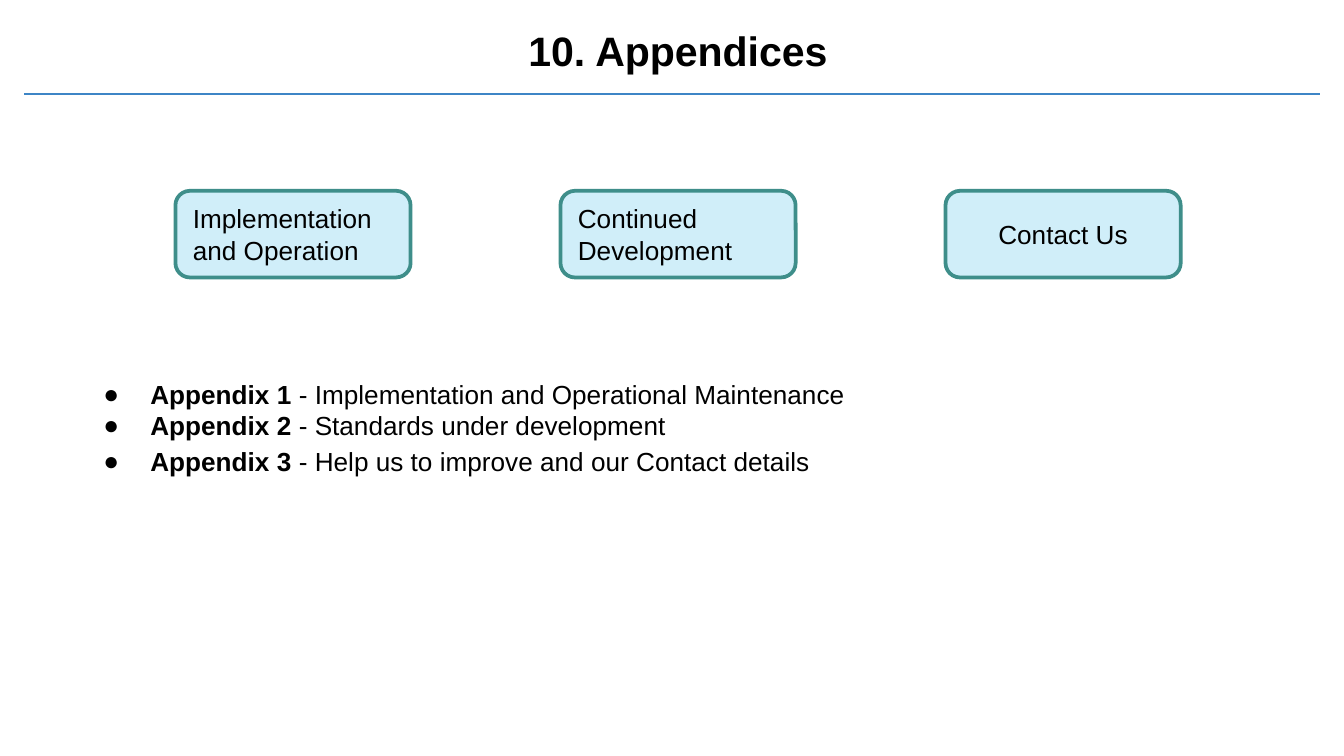
import pptx
import pptx.dml.color
import pptx.enum.shapes
import pptx.enum.text
import pptx.oxml
import pptx.oxml.ns
import pptx.util

PX = 4572  # EMU per px, 200 px to the inch
FONT = "Arial"
COLORS = {"text": "000000", "rule": "3D85C6", "fill": "D0EEF9", "border": "3E8E8A"}
ALIGN = pptx.enum.text.PP_ALIGN
ANCHOR = pptx.enum.text.MSO_ANCHOR


def px(n):
    return pptx.util.Emu(n * PX)


def rgb(name):
    return pptx.dml.color.RGBColor.from_string(COLORS[name])


def add_xml(parent, tag, **attrs):
    element = parent.makeelement(pptx.oxml.ns.qn(tag), attrs)
    parent.append(element)
    return element


def add_text(p, text, size=14, bold=False, color="text"):
    r = p.add_run()
    r.text = text
    r.font.name = FONT
    r.font.size = pptx.util.Pt(size)
    r.font.bold = bold
    r.font.color.rgb = rgb(color)


def set_frame(tf, inset_y=20, anchor=ANCHOR.TOP):
    tf.word_wrap = True
    tf.auto_size = pptx.enum.text.MSO_AUTO_SIZE.NONE
    tf.vertical_anchor = anchor
    tf.margin_left = tf.margin_right = px(20)
    tf.margin_top = tf.margin_bottom = px(inset_y)


def set_title(s, text):
    sp = s.shapes.title
    sp.left, sp.top, sp.width, sp.height = px(77), px(18), px(1864), px(126)
    set_frame(sp.text_frame)
    p = sp.text_frame.paragraphs[0]
    p.alignment = ALIGN.CENTER
    add_text(p, text, size=22, bold=True)


def add_rule(s, x1, x2, y):
    line = s.shapes.add_connector(
        pptx.enum.shapes.MSO_CONNECTOR.STRAIGHT, px(x1), px(y), px(x2), px(y))
    line.line.color.rgb = rgb("rule")
    line.line.width = pptx.util.Pt(1.5)
    add_xml(line._element.spPr, "a:effectLst")


def add_button(s, x, y, text, align):
    sp = s.shapes.add_shape(
        pptx.enum.shapes.MSO_SHAPE.ROUNDED_RECTANGLE, px(x), px(y), px(350), px(129))
    sp.shadow.inherit = False
    sp.fill.solid()
    sp.fill.fore_color.rgb = rgb("fill")
    sp.line.color.rgb = rgb("border")
    sp.line.width = pptx.util.Pt(2)
    set_frame(sp.text_frame, inset_y=10, anchor=ANCHOR.MIDDLE)
    p = sp.text_frame.paragraphs[0]
    p.alignment = align
    add_text(p, text)


def set_bullet(p):
    pPr = p._p.get_or_add_pPr()
    pPr.set("marL", str(px(100)))
    pPr.set("indent", str(px(-70)))
    add_xml(add_xml(pPr, "a:buClr"), "a:srgbClr", val=COLORS["text"])
    add_xml(pPr, "a:buFont", typeface=FONT)
    add_xml(pPr, "a:buChar", char="●")


def add_appendix_list(s, items):
    tf = s.shapes.add_textbox(px(104), px(543), px(1830), px(182)).text_frame
    set_frame(tf)
    for i, (label, description, spacing) in enumerate(items):
        p = tf.add_paragraph() if i else tf.paragraphs[0]
        set_bullet(p)
        p.line_spacing = spacing
        add_text(p, label, bold=True)
        add_text(p, f" - {description}")


def main():
    prs = pptx.Presentation()
    prs.slide_width, prs.slide_height = px(2000), px(1125)
    s = prs.slides.add_slide(prs.slide_layouts[5])

    # Heading
    add_rule(s, 36, 1964, 140)
    set_title(s, "10. Appendices")

    # Appendix list
    add_appendix_list(s, [
        ("Appendix 1", "Implementation and Operational Maintenance", 1.0),
        ("Appendix 2", "Standards under development", 1.0),
        ("Appendix 3", "Help us to improve and our Contact details", 1.15),
    ])

    # Row of buttons
    buttons = [
        ("Implementation and Operation", ALIGN.LEFT),
        ("Continued Development", ALIGN.LEFT),
        ("Contact Us", ALIGN.CENTER),
    ]
    for i, (text, align) in enumerate(buttons):
        add_button(s, 261 + 573 * i, 284, text, align)

    prs.save("out.pptx")


if __name__ == "__main__":
    main()
